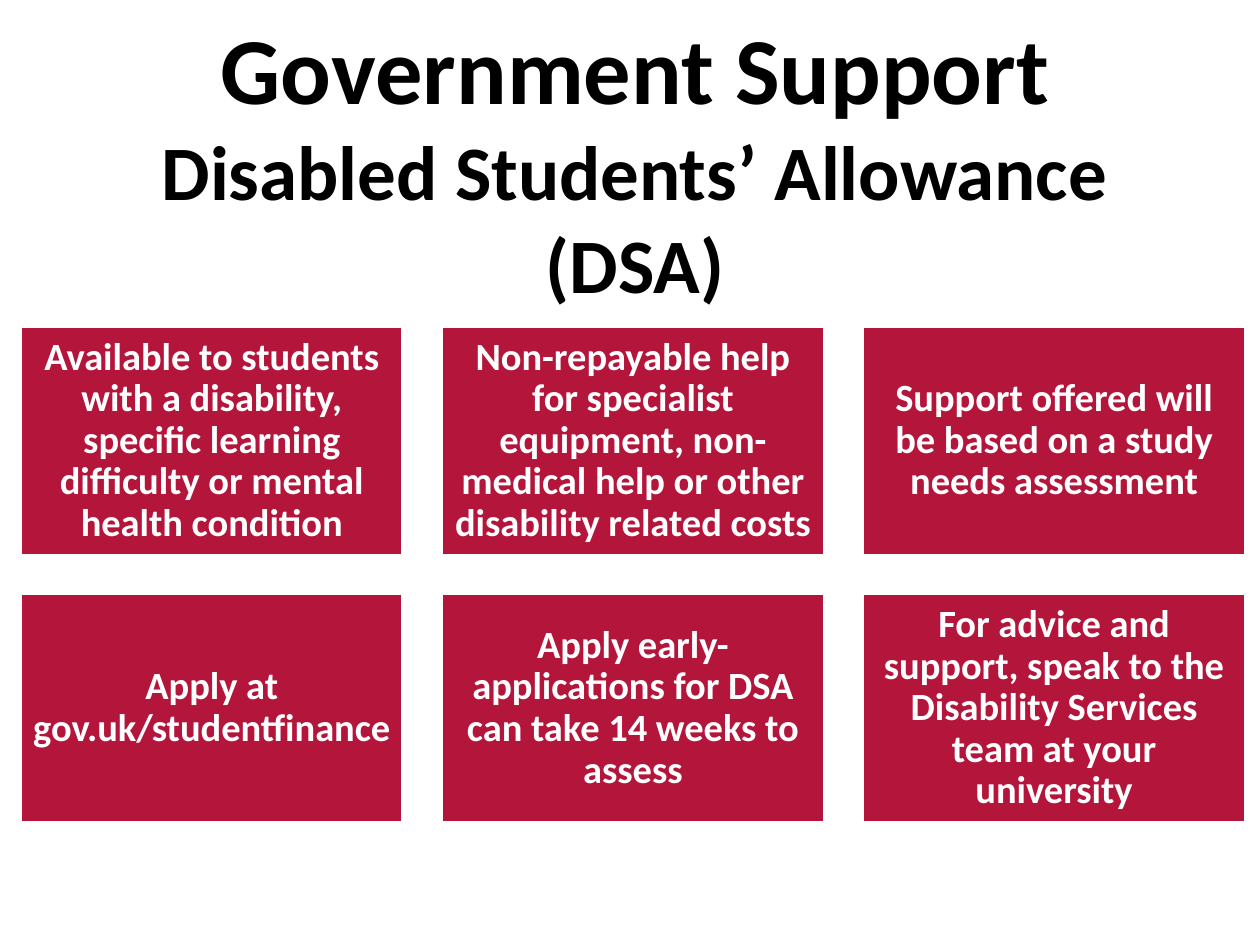
"""Build the Disabled Students' Allowance slide: a two-part title over a grid of fact tiles."""
from dataclasses import dataclass

from pptx import Presentation, util as u
from pptx.dml.color import RGBColor
from pptx.enum import shapes, text

CRIMSON, WHITE, BLACK = "B4153A", "FFFFFF", "000000"
COLUMNS = 3
LEFT, TOP = 0.41, 6.58
TILE_WIDTH, TILE_HEIGHT = 7.72, 4.62
GAP = 0.77
INSET = u.Cm(0.23)

FRAME_FORMAT = {"word_wrap": True, "vertical_anchor": text.MSO_ANCHOR.MIDDLE}
TILE_INSETS = {f"margin_{side}": INSET for side in ("left", "top", "right", "bottom")}


@dataclass
class Tile:
    message: str
    column: int
    row: int


FACTS = (
    "Available to students with a disability, specific learning difficulty or mental health condition",
    "Non-repayable help for specialist equipment, non-medical help or other disability related costs",
    "Support offered will be based on a study needs assessment",
    "Apply at gov.uk/studentfinance",
    "Apply early- applications for DSA can take 14 weeks to assess",
    "For advice and support, speak to the Disability Services team at your university",
)


def colour(hex_value: str) -> RGBColor:
    return RGBColor.from_string(hex_value)


def apply_format(target, values: dict) -> None:
    for name, value in values.items():
        setattr(target, name, value)


def add_words(paragraph, words: str, size: int, hex_value: str) -> None:
    run = paragraph.add_run()
    run.text = words
    apply_format(run.font, {"name": "Calibri", "size": u.Pt(size), "bold": True})
    run.font.color.rgb = colour(hex_value)


def draw_title(slide) -> None:
    title = slide.shapes.add_textbox(u.Cm(2.01), u.Cm(1.73), u.Cm(21.59), u.Cm(2.97))
    apply_format(title.text_frame, FRAME_FORMAT)
    heading = title.text_frame.paragraphs[0]
    heading.alignment = text.PP_ALIGN.CENTER
    add_words(heading, "Government Support", 54, BLACK)
    heading.add_line_break()
    add_words(heading, "Disabled Students’ Allowance (DSA)", 44, BLACK)


def draw_tile(slide, tile: Tile) -> None:
    box = slide.shapes.add_shape(
        shapes.MSO_SHAPE.RECTANGLE,
        u.Cm(LEFT + tile.column * (TILE_WIDTH + GAP)),
        u.Cm(TOP + tile.row * (TILE_HEIGHT + GAP)),
        u.Cm(TILE_WIDTH),
        u.Cm(TILE_HEIGHT),
    )
    box.shadow.inherit = False
    box.fill.solid()
    box.fill.fore_color.rgb = colour(CRIMSON)
    box.line.color.rgb = colour(WHITE)
    box.line.width = u.Pt(2)
    apply_format(box.text_frame, FRAME_FORMAT | TILE_INSETS)
    fact = box.text_frame.paragraphs[0]
    apply_format(fact, {"alignment": text.PP_ALIGN.CENTER, "line_spacing": 0.9})
    add_words(fact, tile.message, 22, WHITE)


def main() -> None:
    deck = Presentation()
    apply_format(deck, {"slide_width": u.Cm(25.4), "slide_height": u.Cm(19.05)})
    slide = deck.slides.add_slide(deck.slide_layouts[6])
    draw_title(slide)
    for index, message in enumerate(FACTS):
        row, column = divmod(index, COLUMNS)
        draw_tile(slide, Tile(message, column, row))
    deck.save("out.pptx")


if __name__ == "__main__":
    main()
